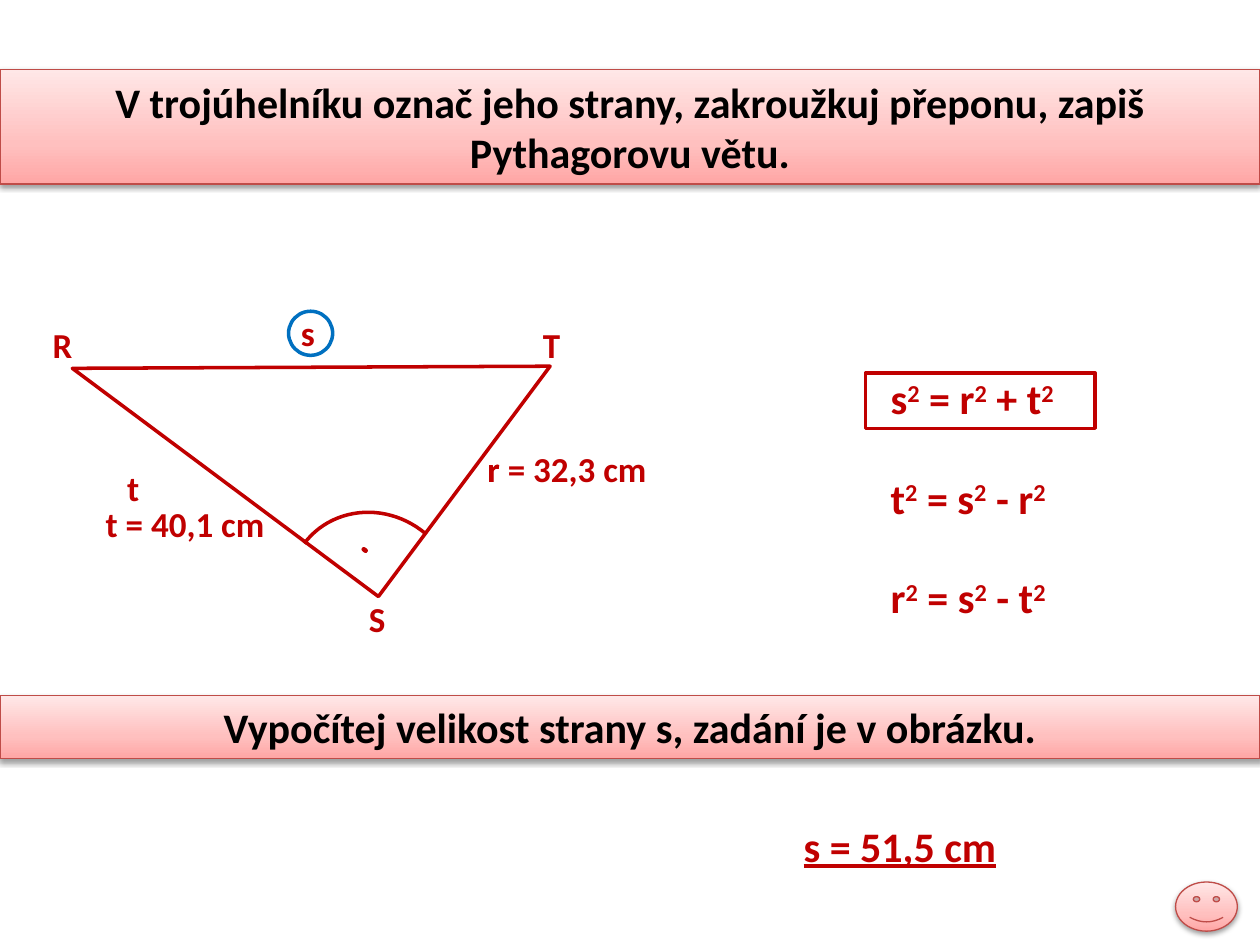
from lxml import etree
from pptx import Presentation, util as u
from pptx.dml import color
from pptx.enum import shapes, text
from pptx.oxml import ns

KIND = shapes.MSO_SHAPE
RED, BLUE, BLACK, WHITE, ROSE = "C00000", "0070C0", "000000", "FFFFFF", "BF4C48"
FONT = "Calibri"
GRADIENT = [(0, "FFA6A5"), (35, "FFC0BF"), (100, "FFE7E7")]
TITLE = "V trojúhelníku označ jeho strany, zakroužkuj přeponu, zapiš Pythagorovu větu."
TASK = "Vypočítej velikost strany s, zadání je v obrázku."
TITLE_AREA = (0, 0.55, 10, 0.91)
TASK_AREA = (0, 5.52, 10, 0.5)
SMILEY_AREA = (9.33, 7, 0.49, 0.39)
TURN = 306.7
OUTLINES = [
    (KIND.RECTANGLE, (6.87, 2.96, 1.82, 0.44), RED, WHITE, 0, ()),
    (KIND.OVAL, (2.29, 2.47, 0.35, 0.35), BLUE, WHITE, 0, ()),
    (KIND.ARC, (2.32, 4.04, 1.28, 1.36), RED, WHITE, TURN, (162, 2.08)),
    (KIND.OVAL, (2.89, 4.35, 0.01, 0.03), RED, WHITE, TURN, ()),
    (KIND.RIGHT_TRIANGLE, (1.33, 1.4, 2.28, 3.03), RED, None, TURN, ()),
]
LABELS = [
    ("T", 4.21, 2.52, 0.49),
    ("S", 2.83, 4.69, 0.49),
    ("R", 0.32, 2.52, 0.49),
    ("t", 0.91, 3.65, 0.49),
    ("s", 2.29, 2.42, 0.49),
    ("r", 3.77, 3.5, 0.49),
    ("r = 32,3 cm", 3.77, 3.5, 2.15),
    ("t = 40,1 cm", 0.74, 3.94, 2.19),
]
FORMULAS = [
    ["s", "2", " = r", "2", " + t", "2"],
    ["t", "2", " = s", "2", " - r", "2"],
    ["r", "2", " = s", "2", " - t", "2"],
]
FORMULA_TOP, FORMULA_STEP = 2.91, 0.79
ANSWER = "s = 51,5 cm"


def rgb(value):
    """Return the colour for a hex string."""
    return color.RGBColor.from_string(value)


def inches(area):
    """Convert a sequence of inches to lengths."""
    return [u.Inches(value) for value in area]


def child(parent, tag, **attributes):
    """Append a drawing element to its parent."""
    element = etree.SubElement(parent, ns.qn(tag))
    for name, value in attributes.items():
        element.set(name, str(value))
    return element


def add_span(para, words, size, ink):
    """Add one bold run to a paragraph."""
    span = para.add_run()
    span.text = words
    span.font.name, span.font.size, span.font.bold = FONT, u.Pt(size), True
    span.font.color.rgb = rgb(ink)
    return span


def add_label(slide, parts, area, size):
    """Add a red text box and return its runs."""
    box = slide.shapes.add_textbox(*inches(area))
    box.text_frame.word_wrap = True
    para = box.text_frame.paragraphs[0]
    return [add_span(para, part, size, RED) for part in parts]


def style_rosy(shape):
    """Give a shape the rosy gradient, thin line and soft shadow."""
    shape.fill.gradient()
    shape.fill.gradient_angle = 90
    properties = shape.element.spPr
    stops = properties.find(".//" + ns.qn("a:gsLst"))
    for stop in list(stops):
        stops.remove(stop)
    for position, value in GRADIENT:
        stop = child(stops, "a:gs", pos=position * 1000)
        child(stop, "a:srgbClr", val=value)
    shape.line.color.rgb, shape.line.width = rgb(ROSE), u.Pt(0.75)
    shape.shadow.inherit = False
    effects = properties.find(ns.qn("a:effectLst"))
    shadow = child(effects, "a:outerShdw", blurRad=u.Pt(3.1), dist=u.Pt(1.6),
                   dir=90 * 60000, rotWithShape=0)
    child(child(shadow, "a:srgbClr", val=BLACK), "a:alpha", val=38000)


def fill_band(shape, words):
    """Style a full-width band and centre its heading."""
    style_rosy(shape)
    frame = shape.text_frame
    frame.word_wrap, frame.auto_size = True, text.MSO_AUTO_SIZE.NONE
    frame.vertical_anchor = text.MSO_ANCHOR.MIDDLE
    para = frame.paragraphs[0]
    para.alignment = text.PP_ALIGN.CENTER
    add_span(para, words, 24, BLACK)


def add_outline(slide, kind, area, ink, paint, turn, adjustments):
    """Add one outlined figure."""
    shape = slide.shapes.add_shape(kind, *inches(area))
    shape.rotation = turn
    for index, value in enumerate(adjustments):
        shape.adjustments[index] = value
    if paint:
        shape.fill.solid()
        shape.fill.fore_color.rgb = rgb(paint)
    else:
        shape.fill.background()
    shape.line.color.rgb, shape.line.width = rgb(ink), u.Pt(2)
    shape.shadow.inherit = False


def main():
    """Build and save the slide."""
    deck = Presentation()
    deck.slide_width, deck.slide_height = inches((10, 7.5))
    slide = deck.slides.add_slide(deck.slide_layouts[5])

    title = slide.shapes.title
    title.left, title.top, title.width, title.height = inches(TITLE_AREA)
    fill_band(title, TITLE)

    for outline in OUTLINES:
        add_outline(slide, *outline)
    for words, left, top, width in LABELS:
        add_label(slide, [words], (left, top, width, 0.44), 20)
    for row, parts in enumerate(FORMULAS):
        area = (6.97, FORMULA_TOP + row * FORMULA_STEP, 2.07, 0.5)
        for span in add_label(slide, parts, area, 24)[1::2]:
            span.font.element.set("baseline", "30000") if hasattr(span.font, "element") else \
                span._r.get_or_add_rPr().set("baseline", "30000")

    fill_band(slide.shapes.add_shape(KIND.RECTANGLE, *inches(TASK_AREA)), TASK)
    answer, = add_label(slide, [ANSWER], (6.28, 6.46, 2.07, 0.5), 24)
    answer.font.underline = True
    style_rosy(slide.shapes.add_shape(KIND.SMILEY_FACE, *inches(SMILEY_AREA)))
    deck.save("out.pptx")


if __name__ == "__main__":
    main()
